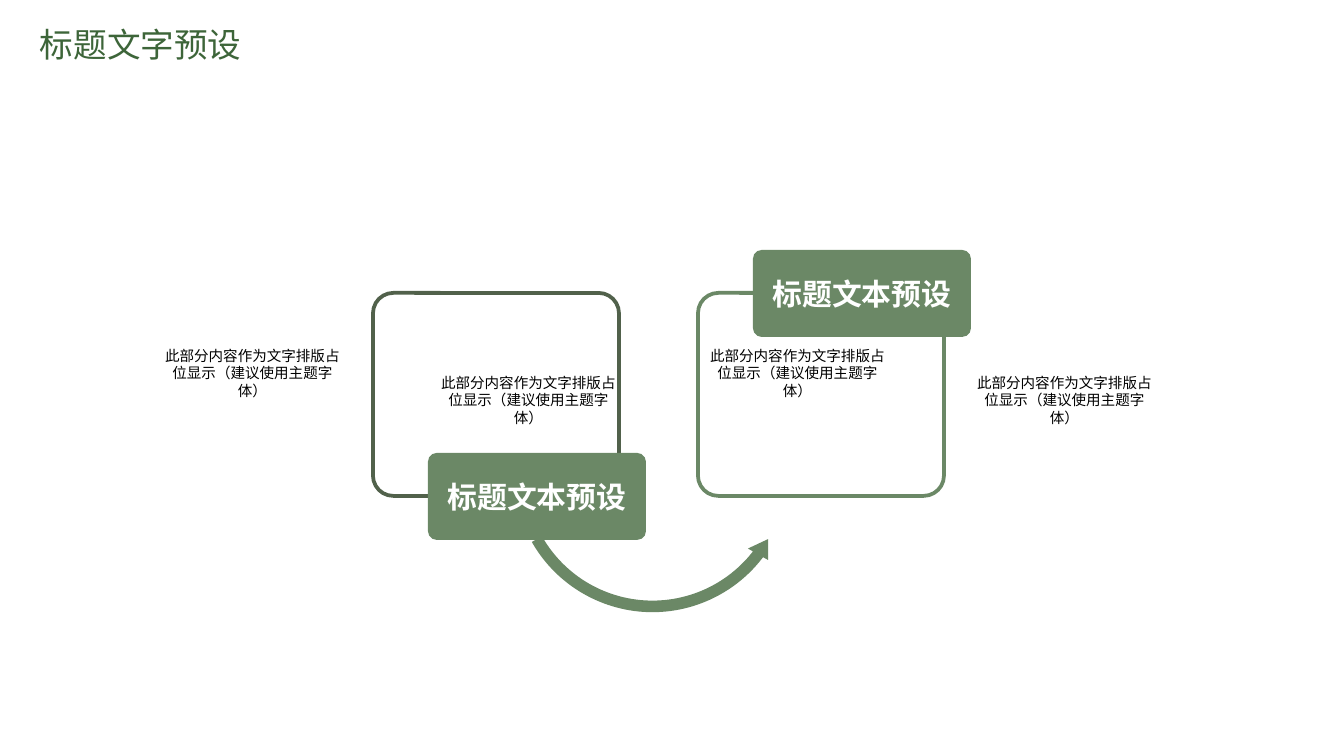
"""Build a slide with two framed steps joined by a curved arrow."""
from lxml import etree
from pptx import Presentation
from pptx.dml.color import RGBColor
from pptx.enum.shapes import MSO_SHAPE
from pptx.enum.text import MSO_ANCHOR, PP_ALIGN
from pptx.oxml.ns import qn
from pptx.util import Pt

ROUNDED = MSO_SHAPE.ROUNDED_RECTANGLE
CURVED_ARROW = MSO_SHAPE.LEFT_CIRCULAR_ARROW
MIDDLE = MSO_ANCHOR.MIDDLE
LEFT, CENTER = PP_ALIGN.LEFT, PP_ALIGN.CENTER

EMU_PER_PX = 914400 / 134.4
COLORS = {"title": "3D6539", "green": "6B8866", "dark": "51614B",
          "white": "FFFFFF", "black": "000000"}
BODY_FONT = "Calibri"
TITLE_FONT = "Noto Sans CJK SC"
STEP_TITLE = "标题文本预设"
NOTE = "此部分内容作为文字排版占位显示（建议使用主题字体）"
FRAME_LEFT, FRAME_TOP, FRAME_STEP = 373, 293, 325
LABEL_SHIFT = 55
STEPS = [("dark", 453), ("green", 250)]
NOTE_LEFTS = [161, 437, 706, 973]
NOTE_TOPS = [347, 374]


def px(*lengths):
    return [round(length * EMU_PER_PX) for length in lengths]


def rgb(name):
    return RGBColor.from_string(COLORS[name])


def add_filled(slide, preset, box, color, adjustments):
    shape = slide.shapes.add_shape(preset, *px(*box))
    shape.shadow.inherit = False
    for index, value in enumerate(adjustments):
        shape.adjustments[index] = value
    shape.fill.solid()
    shape.fill.fore_color.rgb = rgb(color)
    shape.line.fill.background()
    return shape


def write(frame, text, size, font, color, align, insets, bold=False):
    (frame.margin_left, frame.margin_top,
     frame.margin_right, frame.margin_bottom) = px(*insets)
    paragraph = frame.paragraphs[0]
    paragraph.alignment = align
    run = paragraph.add_run()
    run.text = text
    run.font.size = Pt(size)
    run.font.name = font
    run.font.bold = bold
    run.font.color.rgb = rgb(color)


def add_frame(slide, left, color):
    frame = add_filled(slide, ROUNDED, (left, FRAME_TOP, 246, 203), "white", [0.1])
    white = frame.fill._xPr.find(qn("a:solidFill"))[0]
    etree.SubElement(white, qn("a:alpha"), val="90000")
    frame.line.color.rgb = rgb(color)
    frame.line.width = Pt(2)


def add_label(slide, left, top):
    label = add_filled(slide, ROUNDED, (left, top, 218, 87), "green", [0.1])
    label.text_frame.word_wrap = False
    label.text_frame.vertical_anchor = MIDDLE
    write(label.text_frame, STEP_TITLE, 16, BODY_FONT, "white", CENTER,
          (8, 7, 8, 7), bold=True)


def add_text(slide, box, *style):
    frame = slide.shapes.add_textbox(*px(*box)).text_frame
    frame.word_wrap = True
    write(frame, *style)


def main():
    presentation = Presentation()
    presentation.slide_width, presentation.slide_height = px(1344, 756)
    slide = presentation.slides.add_slide(presentation.slide_layouts[6])

    for index, (outline, label_top) in enumerate(STEPS):
        left = FRAME_LEFT + index * FRAME_STEP
        add_frame(slide, left, outline)
        if index == 0:
            add_filled(slide, CURVED_ARROW, (508, 329, 289, 289), "green",
                       [0.04, 4.71, 22.47, 90.25, 0.04])
        add_label(slide, left + LABEL_SHIFT, label_top)

    for index, left in enumerate(NOTE_LEFTS):
        add_text(slide, (left, NOTE_TOPS[index % 2], 183, 51),
                 NOTE, 7.8, BODY_FONT, "black", CENTER, (0, 0, 0, 0))
    add_text(slide, (27, 17, 314, 54),
             "标题文字预设", 18, TITLE_FONT, "title", LEFT, (13, 7, 13, 7))

    presentation.save("out.pptx")


if __name__ == "__main__":
    main()
